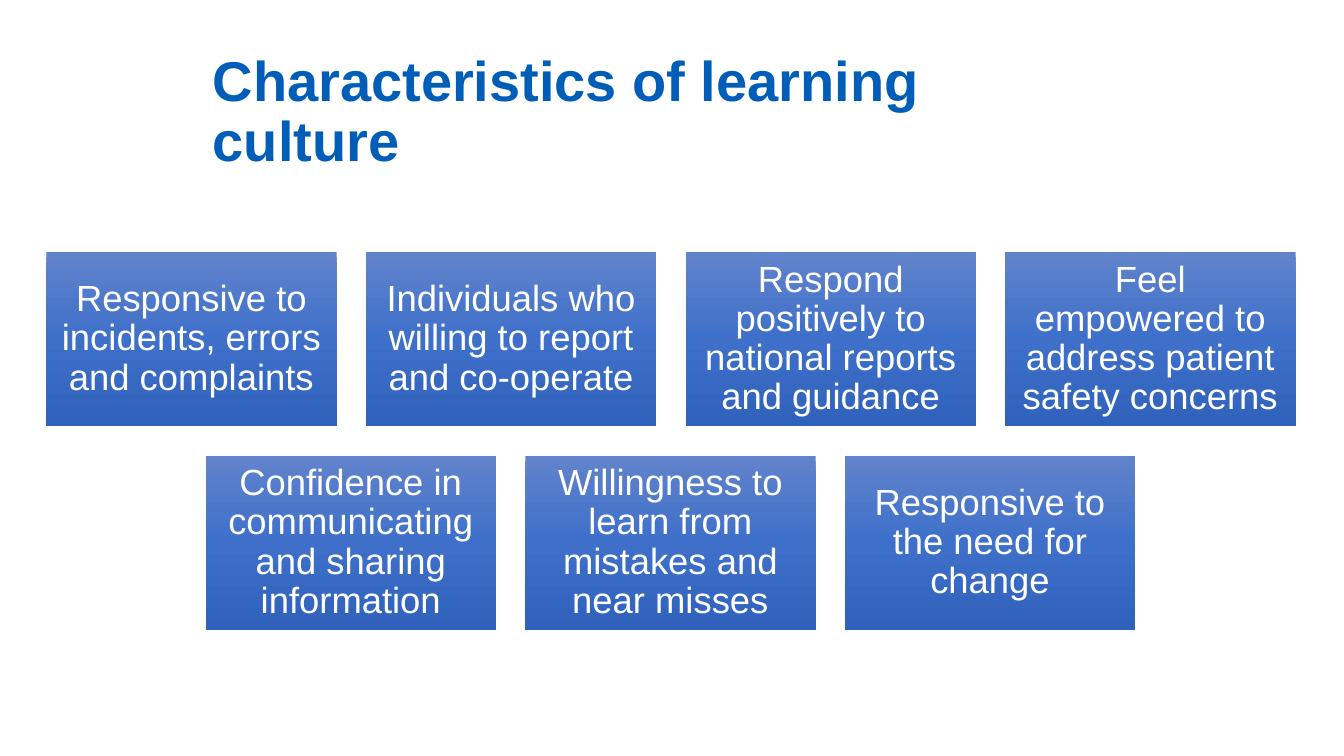
from copy import deepcopy
from dataclasses import dataclass
from typing import Any

from pptx import Presentation
from pptx.dml.color import RGBColor
from pptx.enum.shapes import MSO_SHAPE
from pptx.enum.text import MSO_ANCHOR, PP_ALIGN
from pptx.oxml.ns import qn
from pptx.util import Inches, Pt

WIDTH, TALL, GAP = 2.88, 1.73, 0.29
STOPS = [(0, "6183CB"), (0.5, "3E70CA"), (1, "3062BB")]


@dataclass
class Row:
    left: float
    top: float
    labels: list[str]


ROWS = [
    Row(0.46, 2.5, [
        "Responsive to incidents, errors and complaints",
        "Individuals who willing to report and co-operate",
        "Respond positively to national reports and guidance",
        "Feel empowered to address patient safety concerns",
    ]),
    Row(2.04, 4.52, [
        "Confidence in communicating and sharing information",
        "Willingness to learn from mistakes and near misses",
        "Responsive to the need for change",
    ]),
]


def color(code: str) -> RGBColor:
    return RGBColor.from_string(code)


def apply(target: Any, values: dict[str, Any]) -> None:
    for name, value in values.items():
        setattr(target, name, value)


def write(shape: Any, text: str, size: int, code: str, bold: bool,
          align: PP_ALIGN, inset: float) -> None:
    frame = shape.text_frame
    sides = ("left", "top", "right", "bottom")
    apply(frame, {f"margin_{side}": Inches(inset) for side in sides})
    apply(frame, {"word_wrap": True, "vertical_anchor": MSO_ANCHOR.MIDDLE})
    para = frame.paragraphs[0]
    apply(para, {"text": text, "alignment": align, "line_spacing": 0.9})
    font = para.runs[0].font
    apply(font, {"name": "Arial", "size": Pt(size), "bold": bold})
    font.color.rgb = color(code)


def shade(shape: Any) -> None:
    fill = shape.fill
    fill.gradient()
    fill.gradient_angle = 270
    # Add the middle stop to the default pair
    stops = next(shape.element.iter(qn("a:gsLst")))
    stops.append(deepcopy(stops[0]))
    for stop, (place, code) in zip(fill.gradient_stops, STOPS):
        stop.position = place
        stop.color.rgb = color(code)


def card(slide: Any, left: float, top: float, label: str) -> None:
    box = slide.shapes.add_shape(
        MSO_SHAPE.RECTANGLE, Inches(left), Inches(top), Inches(WIDTH), Inches(TALL))
    box.shadow.inherit = False
    box.line.fill.background()
    shade(box)
    write(box, label, 26, "FFFFFF", False, PP_ALIGN.CENTER, 0.11)


def main() -> None:
    deck = Presentation()
    apply(deck, {"slide_width": Inches(13.33), "slide_height": Inches(7.5)})
    slide = deck.slides.add_slide(deck.slide_layouts[6])

    # Title
    title = slide.shapes.add_textbox(Inches(2.11), Inches(0.4), Inches(8.49), Inches(1.45))
    write(title, "Characteristics of learning culture", 40, "005EB8", True,
          PP_ALIGN.LEFT, 0)

    # Cards
    for row in ROWS:
        for index, label in enumerate(row.labels):
            card(slide, row.left + index * (WIDTH + GAP), row.top, label)

    deck.save("out.pptx")


if __name__ == "__main__":
    main()
